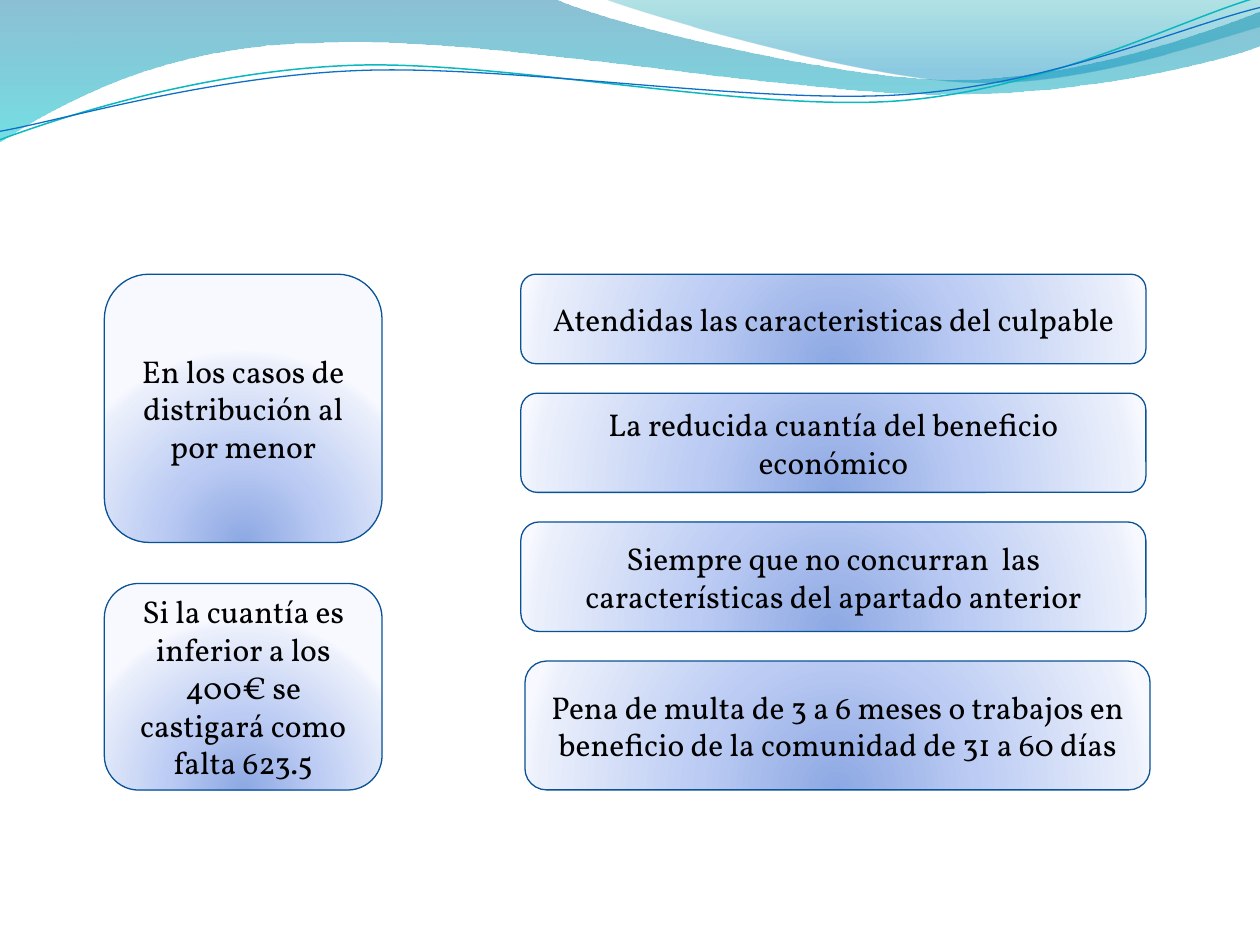
from lxml import etree
from pptx import Presentation
from pptx import util as u
from pptx.dml.color import RGBColor
from pptx.enum import shapes, text
from pptx.oxml import ns

FONT = "Vollkorn"
CARD_STOPS = [(0, "8DA8E3", 100), (43, "BBCBF3", 100), (93, "EAEFFB", 100), (100, "F7F9FF", 100)]
CARD_TOP = 156.7
CURVE_TILT = -2.7
LEFT_CARDS = [
    (153.3, 0, "En los casos de distribución al por menor"),
    (118.1, 0, "Si la cuantía es inferior a los 400€ se castigará como falta 623.5"),
]
RIGHT_CARDS = [
    (51.1, 0, "Atendidas las caracteristicas del culpable"),
    (56.7, 0, "La reducida cuantía del beneficio económico"),
    (62.6, 0, "Siempre que no concurran  las características del apartado anterior"),
    (73.6, 2.4, "Pena de multa de 3 a 6 meses o trabajos en beneficio de la comunidad de 31 a 60 días"),
]
WIDE_WAVE = [
    [(0, -0.7)], [(316.8, -0.7)],
    [(342.7, 12.2), (478.1, 45.4), (545.8, 45.4)],
    [(614.2, 45.4), (689.8, 18.7), (720, 6.5)],
    [(720.7, 25.9)],
    [(707.8, 31.7), (626.4, 54.7), (537.1, 54)],
    [(447.8, 54), (275, 20.2), (185, 24.5)],
    [(92.9, 25.2), (33.1, 59.8), (-0.7, 81.4)],
    [(0, -0.7)],
]
CORNER_WAVE = [
    [(344.9, -0.7)],
    [(366.5, 7.9), (491, 44.6), (553.7, 46.8)],
    [(616.3, 49.7), (691.9, 23), (720, 15.1)],
    [(720, 0)], [(344.9, -0.7)],
]
TEAL_CURVE = [
    [(-1.4, 62.9)],
    [(33.8, 51.7), (114.1, 29.4), (199.8, 29.9)],
    [(284.9, 30.3), (425.8, 67.3), (512.4, 64.9)],
    [(599, 62.4), (676.4, 25.7), (720.2, 15.5)],
]
BLUE_CURVE = [
    [(-1.1, 58)],
    [(32.9, 53.8), (118.3, 32.5), (204.1, 33)],
    [(290.6, 33.4), (428.9, 63.1), (515.5, 61.4)],
    [(601.3, 59.6), (676.3, 30), (721.4, 21.3)],
]


def color(value):
    """Turn a hex string into a colour."""
    return RGBColor.from_string(value)


def set_values(target, values):
    """Set each named attribute on the target."""
    for name, value in values.items():
        setattr(target, name, value)


def set_gradient(shape, stops, radial=False):
    """Fill a shape with a vertical gradient, or a radial one centred low."""
    shape.fill.gradient()
    gradient = shape._element.spPr.find(ns.qn("a:gradFill"))
    for child in list(gradient):
        gradient.remove(child)
    stop_list = etree.SubElement(gradient, ns.qn("a:gsLst"))
    for position, value, opacity in stops:
        stop = etree.SubElement(stop_list, ns.qn("a:gs"), pos=str(position * 1000))
        paint = etree.SubElement(stop, ns.qn("a:srgbClr"), val=value)
        if opacity < 100:
            etree.SubElement(paint, ns.qn("a:alpha"), val=str(opacity * 1000))
    if radial:
        shade = etree.SubElement(gradient, ns.qn("a:path"), path="circle")
        etree.SubElement(shade, ns.qn("a:fillToRect"), l="50000", t="130000", r="50000", b="-30000")
    else:
        etree.SubElement(gradient, ns.qn("a:lin"), ang="5400000", scaled="1")


def set_line(shape, value, width):
    """Give a shape a solid outline."""
    shape.line.color.rgb = color(value)
    shape.line.width = u.Pt(width)


def bend_segments(shape, segments):
    """Merge each group of three line segments into one cubic curve."""
    lines = iter(list(shape._element.iter(ns.qn("a:lnTo"))))
    for segment in segments[1:]:
        parts = [next(lines) for _ in segment]
        if len(parts) == 3:
            curve = etree.Element(ns.qn("a:cubicBezTo"))
            parts[0].addprevious(curve)
            for part in parts:
                curve.append(part[0])
                part.getparent().remove(part)


def add_outline(slide, segments, close):
    """Add a freeform of straight and cubic segments."""
    points = [(u.Pt(x), u.Pt(y)) for segment in segments for x, y in segment]
    builder = slide.shapes.build_freeform(*points[0])
    builder.add_line_segments(points[1:], close=close)
    shape = builder.convert_to_shape()
    bend_segments(shape, segments)
    shape.shadow.inherit = False
    return shape


def add_wave(slide, segments, stops):
    """Add a filled header wave."""
    shape = add_outline(slide, segments, True)
    set_gradient(shape, stops)
    shape.line.fill.background()


def add_curve(slide, segments, value, width):
    """Add a thin tilted header curve."""
    shape = add_outline(slide, segments, False)
    shape.fill.background()
    set_line(shape, value, width)
    shape.rotation = CURVE_TILT


def add_card(slide, left, top, width, height, words):
    """Add a rounded card with centred text."""
    box = [u.Pt(length) for length in (left, top, width, height)]
    shape = slide.shapes.add_shape(shapes.MSO_SHAPE.ROUNDED_RECTANGLE, *box)
    shape.shadow.inherit = False
    set_gradient(shape, CARD_STOPS, radial=True)
    set_line(shape, "095295", 0.75)
    set_values(shape.text_frame, {"word_wrap": True, "vertical_anchor": text.MSO_ANCHOR.MIDDLE})
    paragraph = shape.text_frame.paragraphs[0]
    paragraph.alignment = text.PP_ALIGN.CENTER
    run = paragraph.add_run()
    run.text = words
    set_values(run.font, {"name": FONT, "size": u.Pt(18)})
    run.font.color.rgb = color("000000")


def add_column(slide, left, width, gap, cards):
    """Stack cards downwards with an equal gap."""
    top = CARD_TOP
    for height, shift, words in cards:
        add_card(slide, left + shift, top, width, height, words)
        top += height + gap


def main():
    """Build and save the slide."""
    presentation = Presentation()
    set_values(presentation, {"slide_width": u.Pt(720), "slide_height": u.Pt(540)})
    slide = presentation.slides.add_slide(presentation.slide_layouts[6])
    add_wave(slide, WIDE_WAVE, [(0, "0074A1", 45), (100, "00C6CF", 55)])
    add_wave(slide, CORNER_WAVE, [(0, "00A1A9", 30), (80, "008BBF", 45)])
    add_curve(slide, TEAL_CURVE, "0AB8BF", 0.85)
    add_curve(slide, BLUE_CURVE, "0F6FC6", 0.75)
    add_column(slide, 59.6, 158.7, 23.4, LEFT_CARDS)
    add_column(slide, 297.6, 357.2, 16.9, RIGHT_CARDS)
    presentation.save("out.pptx")


if __name__ == "__main__":
    main()
